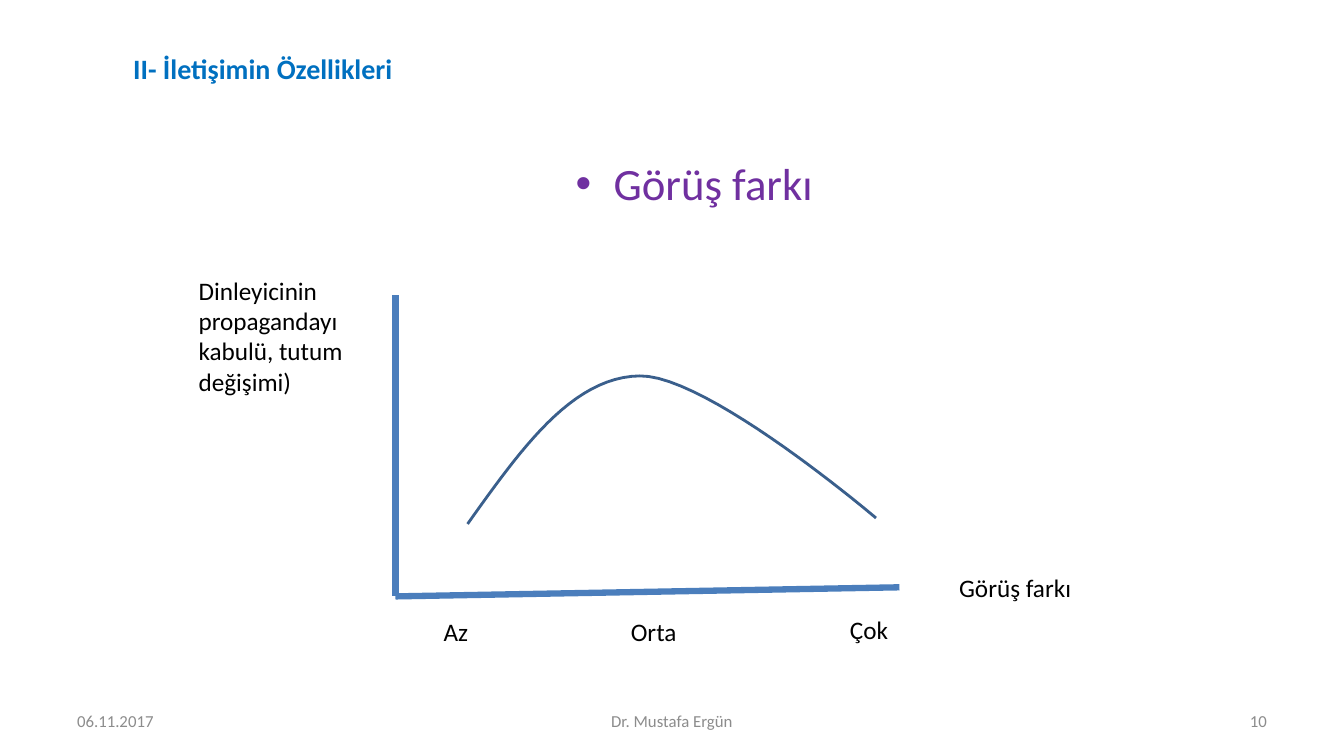
from dataclasses import dataclass

from lxml.etree import SubElement
from pptx import Presentation
from pptx.dml.color import RGBColor
from pptx.enum.shapes import MSO_CONNECTOR
from pptx.enum.text import MSO_ANCHOR, PP_ALIGN
from pptx.oxml.ns import qn
from pptx.util import Pt


@dataclass(frozen=True)
class Theme:
    font: str = "Calibri"
    heading: str = "0070C0"
    topic: str = "7030A0"
    text: str = "000000"
    footer: str = "8C8C8C"
    axis: str = "4B7EBC"
    curve: str = "3A5F8C"
    heading_size: int = 20
    topic_size: int = 32
    label_size: int = 18
    footer_size: int = 12


theme = Theme()
deck = Presentation()
deck.slide_width, deck.slide_height = Pt(960), Pt(540)
page = deck.slides.add_slide(deck.slide_layouts[6])


def style(para, size, color, bold=False):
    para.font.name = theme.font
    para.font.size = Pt(size)
    para.font.bold = bold
    para.font.color.rgb = RGBColor.from_string(color)


def add_text(text, left, top, width, height, size, color):
    box = page.shapes.add_textbox(Pt(left), Pt(top), Pt(width), Pt(height))
    box.text_frame.word_wrap = True
    para = box.text_frame.paragraphs[0]
    para.text = text
    style(para, size, color)
    return box.text_frame


# Footer
for text, left, width, align in [
    ("06.11.2017", 48, 224, PP_ALIGN.LEFT),
    ("Dr. Mustafa Ergün", 328, 304, PP_ALIGN.CENTER),
    ("10", 688, 224, PP_ALIGN.RIGHT),
]:
    frame = add_text(text, left, 500.5, width, 28.75, theme.footer_size, theme.footer)
    frame.vertical_anchor = MSO_ANCHOR.MIDDLE
    frame.paragraphs[0].alignment = align

# Heading and bulleted topic
frame = add_text("II- İletişimin Özellikleri", 88, 9.5, 816, 509,
                 theme.heading_size, theme.heading)
heading = frame.paragraphs[0]
heading.font.bold = True
topic = frame.add_paragraph()
topic.text = "Görüş farkı"
topic.alignment = PP_ALIGN.CENTER
for para in (heading, topic):
    para.line_spacing = 2.0
    para.space_before = para.space_after = Pt(6)
properties = topic._p.get_or_add_pPr()
properties.set("marL", str(Pt(27)))
properties.set("indent", str(Pt(-27)))
SubElement(properties, qn("a:buFont")).set("typeface", "Arial")
SubElement(properties, qn("a:buChar")).set("char", "•")
style(topic, theme.topic_size, theme.topic)

# Axes
for x1, y1, x2, y2 in [(282.5, 211, 282.5, 425.5), (282.5, 426, 642.5, 419.5)]:
    axis = page.shapes.add_connector(MSO_CONNECTOR.STRAIGHT,
                                     Pt(x1), Pt(y1), Pt(x2), Pt(y2))
    axis.line.color.rgb = RGBColor.from_string(theme.axis)
    axis.line.width = Pt(4.5)
    SubElement(axis._element.spPr, qn("a:effectLst"))

# Axis labels
for text, left, top, width, height in [
    ("Dinleyicinin propagandayı kabulü, tutum değişimi)", 134.75, 193, 147.5, 94.5),
    ("Az", 309.75, 436.5, 68.5, 29),
    ("Orta", 443.5, 436.5, 68.5, 29),
    ("Çok", 600, 435, 57, 29),
    ("Görüş farkı", 678, 405.5, 98, 29),
]:
    add_text(text, left, top, width, height, theme.label_size, theme.text)

# Acceptance curve: two cubic Bézier segments, sampled evenly
segments = [
    [(334, 374.25), (371.5, 321.75), (408.25, 269.25), (457, 268.5)],
    [(457, 268.5), (505.5, 267.75), (625.75, 370), (625.75, 370)],
]
steps = 24
points = []
for segment in segments:
    for step in range(1, steps + 1):
        t = step / steps
        weights = ((1 - t) ** 3, 3 * t * (1 - t) ** 2, 3 * t ** 2 * (1 - t), t ** 3)
        points.append(tuple(
            Pt(sum(weight * value for weight, value in zip(weights, values)))
            for values in zip(*segment)))
start_x, start_y = segments[0][0]
builder = page.shapes.build_freeform(Pt(start_x), Pt(start_y))
builder.add_line_segments(points, close=False)
curve = builder.convert_to_shape()
curve.shadow.inherit = False
curve.fill.background()
curve.line.color.rgb = RGBColor.from_string(theme.curve)
curve.line.width = Pt(2)

deck.save("out.pptx")
